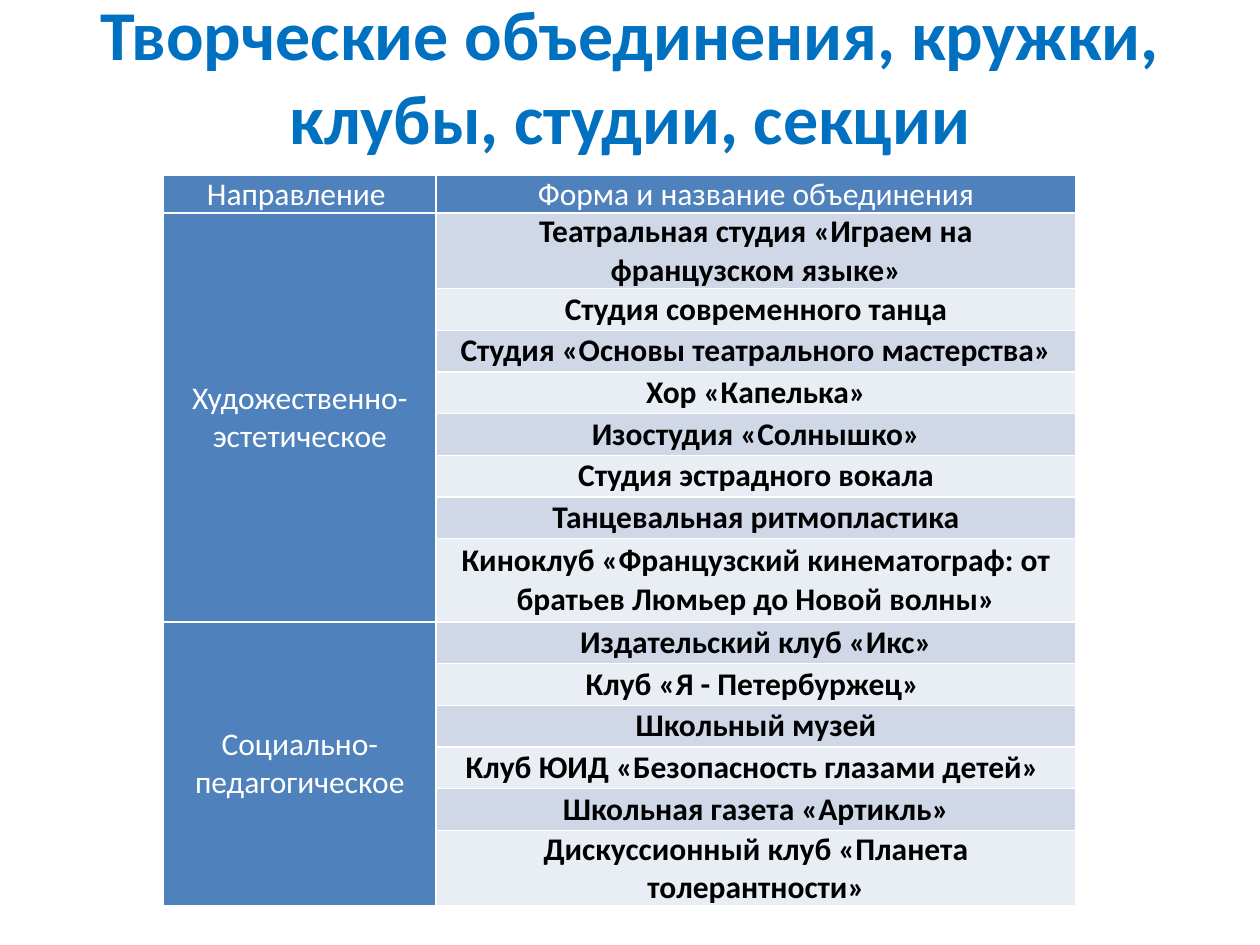
import pptx
import pptx.dml.color
import pptx.enum.text
import pptx.util

Cm = pptx.util.Cm
Pt = pptx.util.Pt
RGBColor = pptx.dml.color.RGBColor
MIDDLE = pptx.enum.text.MSO_ANCHOR.MIDDLE
CENTER = pptx.enum.text.PP_ALIGN.CENTER

TITLE_BLUE = RGBColor(0x00, 0x70, 0xC0)
HEADER_BLUE = RGBColor(0x4F, 0x81, 0xBD)
BAND_DARK = RGBColor(0xD0, 0xD8, 0xE8)
BAND_LIGHT = RGBColor(0xE9, 0xED, 0xF4)
WHITE = RGBColor(0xFF, 0xFF, 0xFF)
BLACK = RGBColor(0x00, 0x00, 0x00)

HEADINGS = ["Направление ", "Форма и название объединения"]
DIRECTIONS = {
    "Художественно-эстетическое": [
        "Театральная студия «Играем на французском языке»",
        "Студия современного танца",
        "Студия «Основы театрального мастерства»",
        "Хор «Капелька»",
        "Изостудия «Солнышко»",
        "Студия эстрадного вокала",
        "Танцевальная ритмопластика",
        "Киноклуб «Французский кинематограф: от братьев Люмьер до Новой волны»",
    ],
    "Социально-педагогическое": [
        "Издательский клуб «Икс»",
        "Клуб «Я - Петербуржец» ",
        "Школьный музей",
        "Клуб ЮИД «Безопасность глазами детей» ",
        "Школьная газета «Артикль»",
        "Дискуссионный клуб «Планета толерантности»",
    ],
}
ROW_HEIGHT = 0.84
SPECIAL_HEIGHTS = {0: 0.76, 1: 1.24, 8: 1.68}


def write_paragraph(paragraph, text, size, color, bold):
    paragraph.text = text
    paragraph.alignment = CENTER
    paragraph.font.name = "Calibri"
    paragraph.font.size = Pt(size)
    paragraph.font.bold = bold
    paragraph.font.color.rgb = color


def fill_cell(cell, text, background, color=WHITE, bold=False):
    cell.fill.solid()
    cell.fill.fore_color.rgb = background
    cell.vertical_anchor = MIDDLE
    cell.margin_left = cell.margin_right = Cm(0.19)
    cell.margin_top = cell.margin_bottom = 0
    write_paragraph(cell.text_frame.paragraphs[0], text, 18, color, bold)


presentation = pptx.Presentation()
presentation.slide_width = Cm(25.4)
presentation.slide_height = Cm(19.05)
slide = presentation.slides.add_slide(presentation.slide_layouts[6])

title = slide.shapes.add_textbox(Cm(1.27), Cm(0.76), Cm(22.86), Cm(3.18))
title.text_frame.word_wrap = True
title.text_frame.vertical_anchor = MIDDLE
write_paragraph(
    title.text_frame.paragraphs[0],
    "Творческие объединения, кружки, клубы, студии, секции\v",
    40, TITLE_BLUE, True,
)

row_count = 1 + sum(len(clubs) for clubs in DIRECTIONS.values())
table = slide.shapes.add_table(
    row_count, 2, Cm(3.3), Cm(3.53), Cm(18.39), Cm(14.76)
).table
table.first_col = True
table.columns[0].width = Cm(5.49)
table.columns[1].width = Cm(12.9)
for index, row in enumerate(table.rows):
    row.height = Cm(SPECIAL_HEIGHTS.get(index, ROW_HEIGHT))

for column, heading in enumerate(HEADINGS):
    fill_cell(table.cell(0, column), heading, HEADER_BLUE)

row_index = 1
for direction, clubs in DIRECTIONS.items():
    direction_cell = table.cell(row_index, 0)
    direction_cell.merge(table.cell(row_index + len(clubs) - 1, 0))
    fill_cell(direction_cell, direction, HEADER_BLUE)
    for club in clubs:
        band = BAND_DARK if row_index % 2 else BAND_LIGHT
        fill_cell(table.cell(row_index, 1), club, band, BLACK, True)
        row_index += 1

presentation.save("out.pptx")
